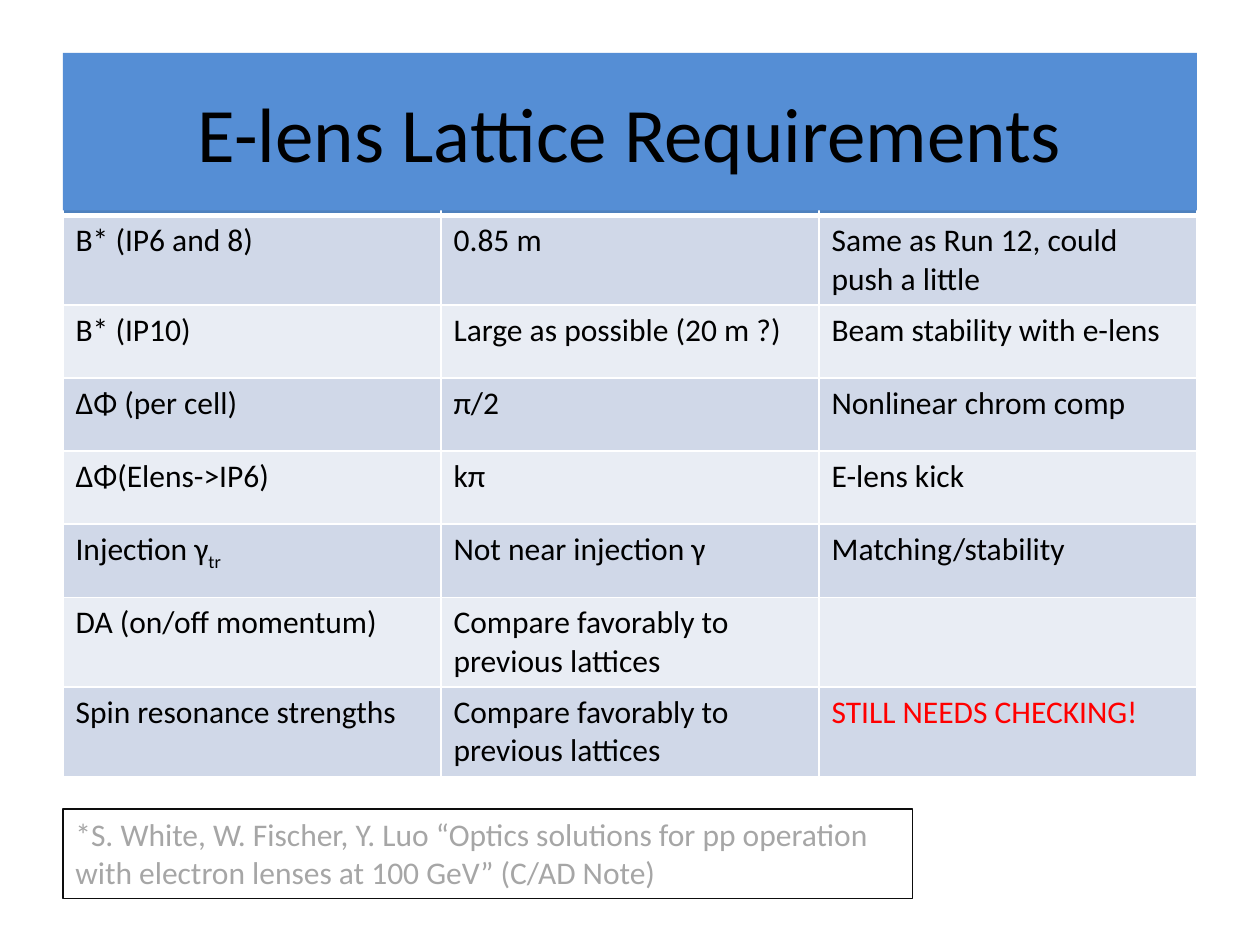
from lxml import etree
from pptx import Presentation
from pptx.dml.color import RGBColor
from pptx.enum.shapes import MSO_SHAPE
from pptx.enum.text import MSO_ANCHOR, MSO_AUTO_SIZE, PP_ALIGN
from pptx.oxml.ns import qn
from pptx.util import Inches, Pt

FONT = "Calibri"
COLORS = {
    "title": "558ED5",
    "header": "4F81BD",
    "odd_row": "D0D8E8",
    "even_row": "E9EDF4",
    "white": "FFFFFF",
    "text": "000000",
    "warning": "FF0000",
    "note": "A6A6A6",
    "note_line": "0D0D0D",
}

REQUIREMENTS = [
    ("Β* (IP6 and 8)", "0.85 m", "Same as Run 12, could push a little"),
    ("Β* (IP10)", "Large as possible (20 m ?)", "Beam stability with e-lens"),
    ("ΔΦ (per cell)", "π/2", "Nonlinear chrom comp"),
    ("ΔΦ(Elens->IP6)", "kπ", "E-lens kick"),
    ("Injection γ", "Not near injection γ", "Matching/stability"),
    ("DA (on/off momentum)", "Compare favorably to previous lattices", ""),
    ("Spin resonance strengths", "Compare favorably to previous lattices",
     "STILL NEEDS CHECKING!"),
]
SUBSCRIPTS = {"Injection γ": "tr"}
WARNINGS = {"STILL NEEDS CHECKING!"}


def color(name):
    return RGBColor.from_string(COLORS[name])


def add_text(paragraph, text, size=18, fill="text", align=PP_ALIGN.LEFT, baseline=None):
    paragraph.alignment = align
    run = paragraph.add_run()
    run.text = text
    run.font.name = FONT
    run.font.size = Pt(size)
    run.font.color.rgb = color(fill)
    if baseline is not None:
        run.font._element.set("baseline", str(baseline * 1000))


def add_box(slide, box, fill, line=None):
    shape = slide.shapes.add_shape(MSO_SHAPE.RECTANGLE, *map(Inches, box))
    shape.shadow.inherit = False
    shape.fill.solid()
    shape.fill.fore_color.rgb = color(fill)
    if line:
        shape.line.color.rgb = color(line)
        shape.line.width = Pt(0.75)
    else:
        shape.line.fill.background()
    shape.text_frame.word_wrap = True
    return shape


def style_cell(cell, fill, borders):
    properties = cell._tc.get_or_add_tcPr()
    for side, width in borders.items():
        line = etree.SubElement(properties, qn(f"a:ln{side}"), w=str(Pt(width)))
        solid = etree.SubElement(line, qn("a:solidFill"))
        etree.SubElement(solid, qn("a:srgbClr"), val=COLORS["white"])
    cell.fill.solid()
    cell.fill.fore_color.rgb = color(fill)


def add_requirements_table(slide, box, row_height):
    rows = [("", "", "")] + REQUIREMENTS
    frame = slide.shapes.add_table(len(rows), len(rows[0]), *map(Inches, box))
    table = frame.table
    for row_index, values in enumerate(rows):
        table.rows[row_index].height = Inches(row_height)
        if row_index == 0:
            fill, borders = "header", {"L": 1, "R": 1, "T": 1, "B": 3}
        else:
            fill = "odd_row" if row_index % 2 else "even_row"
            borders = {"L": 1, "R": 1, "B": 1}
        for column_index, text in enumerate(values):
            cell = table.cell(row_index, column_index)
            style_cell(cell, fill, borders)
            if not text:
                continue
            paragraph = cell.text_frame.paragraphs[0]
            add_text(paragraph, text, fill="warning" if text in WARNINGS else "text")
            if text in SUBSCRIPTS:
                add_text(paragraph, SUBSCRIPTS[text], baseline=-25)
    # The frame is taller than its rows, so the last row takes the rest
    frame.height = Inches(box[3])


def add_title(slide, box, text):
    shape = add_box(slide, box, "title")
    shape.text_frame.vertical_anchor = MSO_ANCHOR.MIDDLE
    add_text(shape.text_frame.paragraphs[0], text, size=44, align=PP_ALIGN.CENTER)


def add_note(slide, box, text):
    shape = add_box(slide, box, "white", line="note_line")
    shape.text_frame.vertical_anchor = MSO_ANCHOR.TOP
    shape.text_frame.auto_size = MSO_AUTO_SIZE.SHAPE_TO_FIT_TEXT
    add_text(shape.text_frame.paragraphs[0], text, fill="note")


def main():
    presentation = Presentation()
    presentation.slide_width = Inches(10)
    presentation.slide_height = Inches(7.5)
    slide = presentation.slides.add_slide(presentation.slide_layouts[6])

    # The title band covers most of the empty header row
    add_requirements_table(slide, (0.5, 1.13, 9, 5.29), row_height=0.58)
    add_title(slide, (0.5, 0.42, 9, 1.25), "E-lens Lattice Requirements")
    add_note(slide, (0.5, 6.42, 6.74, 0.71),
             "*S. White, W. Fischer, Y. Luo “Optics solutions for pp operation "
             "with electron lenses at 100 GeV” (C/AD Note)")

    presentation.save("out.pptx")


if __name__ == "__main__":
    main()
